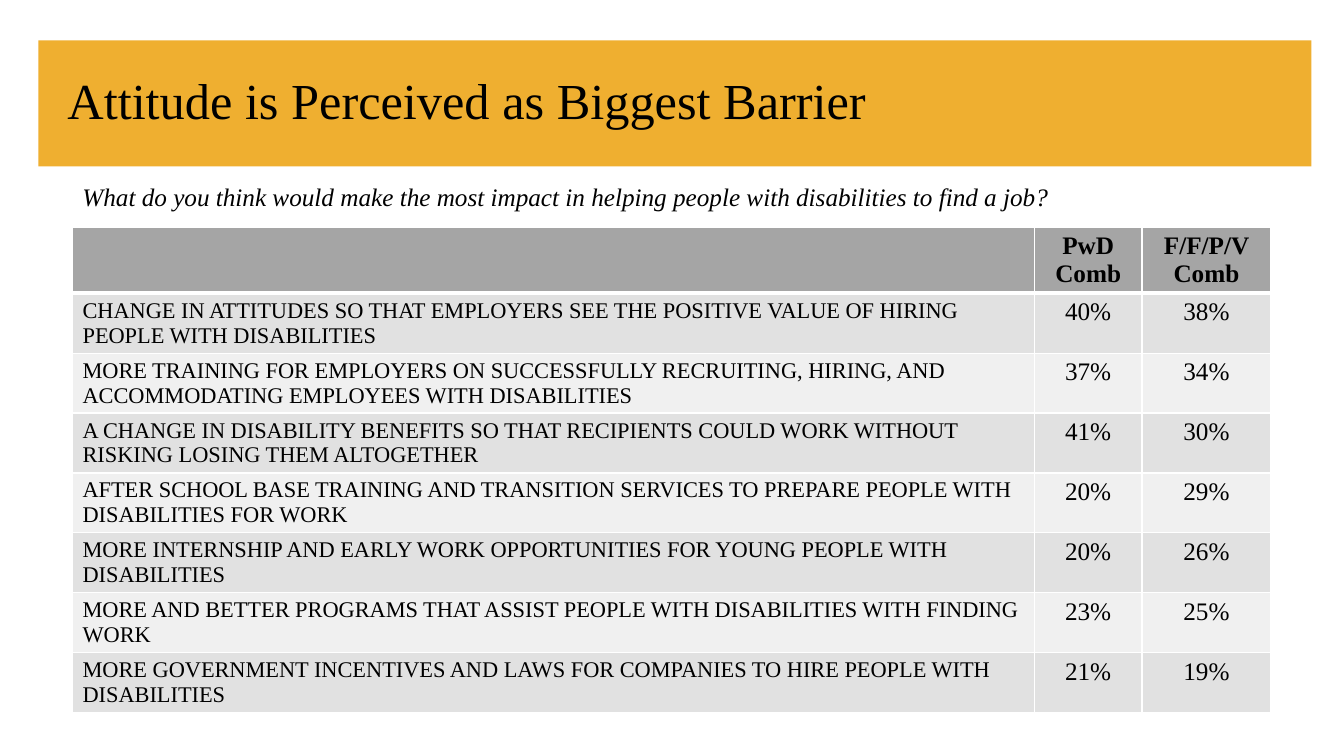
from lxml import etree
from pptx import Presentation
from pptx.dml.color import RGBColor
from pptx.enum import shapes, text
from pptx.oxml import ns
from pptx.util import Pt

BLACK = RGBColor(0x00, 0x00, 0x00)
WHITE = RGBColor(0xFF, 0xFF, 0xFF)
GOLD = RGBColor(0xEF, 0xAF, 0x30)
HEADER_GREY = RGBColor(0xA5, 0xA5, 0xA5)
BAND_GREYS = (RGBColor(0xE1, 0xE1, 0xE1), RGBColor(0xF0, 0xF0, 0xF0))

HEADINGS = ("", "PwD Comb", "F/F/P/V Comb")
ANSWERS = (
    ("CHANGE IN ATTITUDES SO THAT EMPLOYERS SEE THE POSITIVE VALUE OF HIRING "
     "PEOPLE WITH DISABILITIES", "40%", "38%"),
    ("MORE TRAINING FOR EMPLOYERS ON SUCCESSFULLY RECRUITING, HIRING, AND "
     "ACCOMMODATING EMPLOYEES WITH DISABILITIES", "37%", "34%"),
    ("A CHANGE IN DISABILITY BENEFITS SO THAT RECIPIENTS COULD WORK WITHOUT "
     "RISKING LOSING THEM ALTOGETHER", "41%", "30%"),
    ("AFTER SCHOOL BASE TRAINING AND TRANSITION SERVICES TO PREPARE PEOPLE WITH "
     "DISABILITIES FOR WORK", "20%", "29%"),
    ("MORE INTERNSHIP AND EARLY WORK OPPORTUNITIES FOR YOUNG PEOPLE WITH "
     "DISABILITIES", "20%", "26%"),
    ("MORE AND BETTER PROGRAMS THAT ASSIST PEOPLE WITH DISABILITIES WITH FINDING "
     "WORK", "23%", "25%"),
    ("MORE GOVERNMENT INCENTIVES AND LAWS FOR COMPANIES TO HIRE PEOPLE WITH "
     "DISABILITIES", "21%", "19%"),
)


class SurveySlide:
    font_name = "Times New Roman"

    def __init__(self, deck):
        self.page = deck.slides.add_slide(deck.slide_layouts[5])

    def set_text(self, para, words, size, align=text.PP_ALIGN.LEFT, bold=False, italic=False):
        para.text = words
        para.alignment = align
        font = para.font
        font.name, font.size = self.font_name, Pt(size)
        font.bold, font.italic = bold, italic
        font.color.rgb = BLACK

    def title(self, words):
        title = self.page.shapes.title
        title.left, title.top, title.width, title.height = Pt(41), Pt(28.8), Pt(828), Pt(90)
        frame = title.text_frame
        frame.auto_size = text.MSO_AUTO_SIZE.NONE
        frame.vertical_anchor = text.MSO_ANCHOR.MIDDLE
        self.set_text(frame.paragraphs[0], words, 36)
        frame.paragraphs[0].line_spacing = 0.9

    def title_bar(self, left, top, width, height):
        """Add the coloured bar behind the title."""
        bar = self.page.shapes.add_shape(
            shapes.MSO_SHAPE.RECTANGLE, Pt(left), Pt(top), Pt(width), Pt(height))
        bar.shadow.inherit = False
        bar.fill.solid()
        bar.fill.fore_color.rgb = GOLD
        bar.line.fill.background()
        self.page.shapes.title.element.addprevious(bar.element)

    def question(self, words, left, top, width, height):
        box = self.page.shapes.add_textbox(Pt(left), Pt(top), Pt(width), Pt(height))
        box.text_frame.word_wrap = True
        self.set_text(box.text_frame.paragraphs[0], words, 18, italic=True)

    def border(self, cell, top, bottom):
        """Draw white cell borders; top and bottom are line widths in points."""
        properties = cell._tc.get_or_add_tcPr()
        widths = {"a:lnL": 1, "a:lnR": 1, "a:lnT": top, "a:lnB": bottom}
        for position, (side, width) in enumerate(widths.items()):
            line = etree.Element(ns.qn(side), w=str(Pt(width)))
            fill = etree.SubElement(line, ns.qn("a:solidFill"))
            etree.SubElement(fill, ns.qn("a:srgbClr"), val=str(WHITE))
            properties.insert(position, line)

    def table(self, rows, left, top, column_widths, header_height, row_height):
        height = header_height + row_height * (len(rows) - 1)
        table = self.page.shapes.add_table(
            len(rows), len(column_widths), Pt(left), Pt(top),
            Pt(sum(column_widths)), Pt(height)).table
        for column, width in zip(table.columns, column_widths):
            column.width = Pt(width)
        for r, row in enumerate(rows):
            header = r == 0
            table.rows[r].height = Pt(header_height if header else row_height)
            for c, words in enumerate(row):
                cell = table.cell(r, c)
                cell.fill.solid()
                cell.fill.fore_color.rgb = HEADER_GREY if header else BAND_GREYS[(r - 1) % 2]
                self.border(cell, top=3 if r == 1 else 1, bottom=3 if header else 1)
                align = text.PP_ALIGN.CENTER if c else text.PP_ALIGN.LEFT
                size = 18 if header or c else 16
                self.set_text(cell.text_frame.paragraphs[0], words, size, align, bold=header)


def main():
    deck = Presentation()
    deck.slide_width, deck.slide_height = Pt(960), Pt(540)
    slide = SurveySlide(deck)
    slide.title("Attitude is Perceived as Biggest Barrier")
    slide.title_bar(27.4, 28.8, 909.4, 90)
    slide.table((HEADINGS,) + ANSWERS, 51.8, 162.4, (687, 77, 92), 45.8, 42.8)
    slide.question("What do you think would make the most impact in helping people "
                   "with disabilities to find a job?", 51.8, 126, 792, 29)
    deck.save("out.pptx")


if __name__ == "__main__":
    main()
